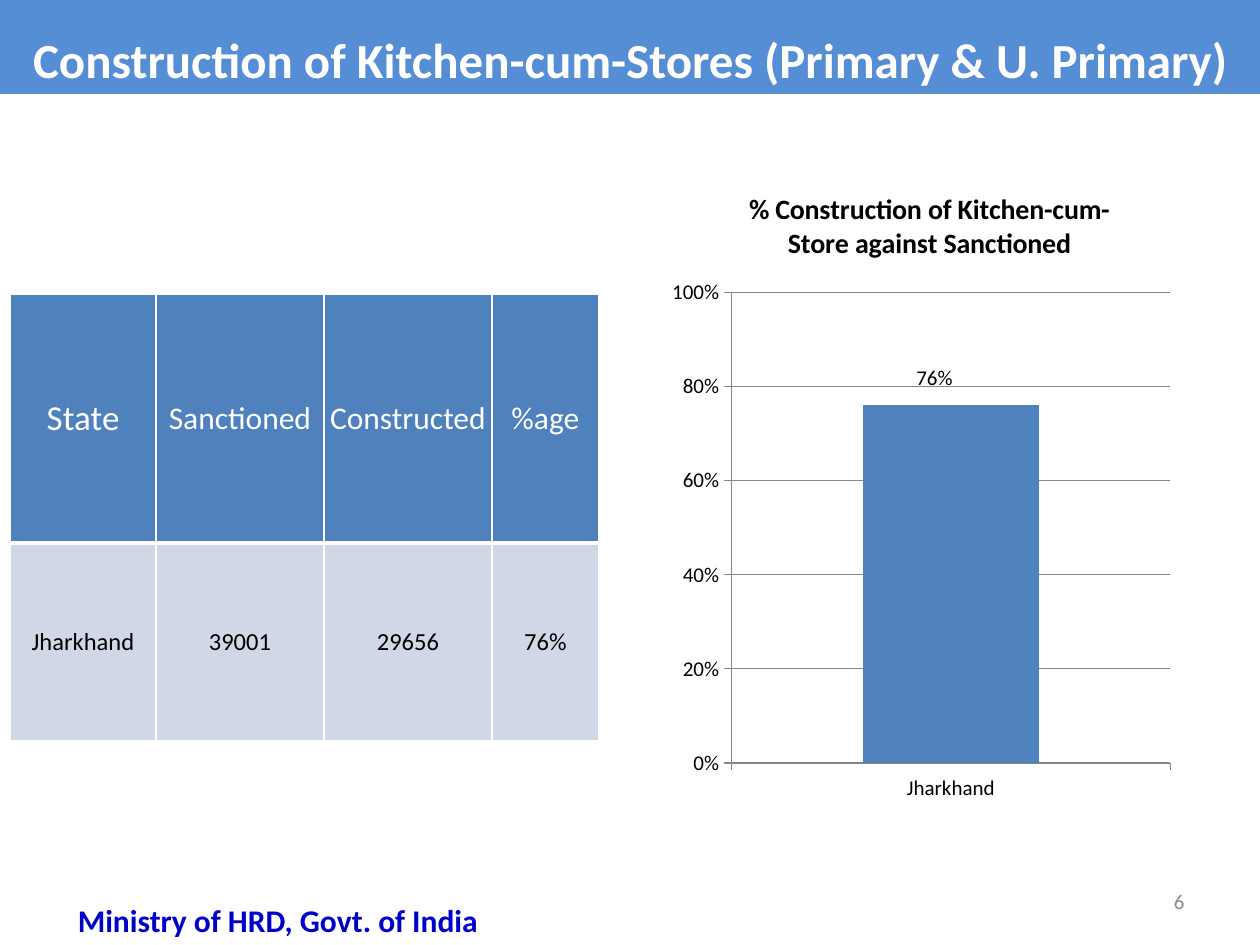
from dataclasses import dataclass

from lxml.etree import SubElement
from pptx import Presentation
from pptx.chart.data import CategoryChartData
from pptx.dml.color import RGBColor
from pptx.enum.chart import XL_CHART_TYPE, XL_TICK_MARK
from pptx.enum.shapes import MSO_SHAPE
from pptx.enum.text import MSO_ANCHOR, PP_ALIGN
from pptx.oxml.ns import qn
from pptx.util import Emu, Pt


@dataclass(frozen=True)
class Theme:
    font: str = "Calibri"
    banner: str = "558ED5"
    accent: str = "4F81BD"
    band: str = "D0D8E8"
    white: str = "FFFFFF"
    black: str = "000000"
    grid: str = "868686"
    muted: str = "8C8C8C"
    footer: str = "0000CC"
    title_size: int = 28
    state_size: int = 20
    head_size: int = 18
    chart_title_size: int = 16
    body_size: int = 14
    small_size: int = 12


THEME = Theme()
EMU_PER_PX = 914400 / 126


def px(length):
    return Emu(round(length * EMU_PER_PX))


def rgb(color):
    return RGBColor.from_string(color)


def set_font(font, size, color, bold=False):
    font.name, font.size, font.bold = THEME.font, Pt(size), bold
    font.color.rgb = rgb(color)


def write(frame, text, size, color, bold=False, align=PP_ALIGN.CENTER):
    frame.word_wrap = True
    para = frame.paragraphs[0]
    para.text = text
    para.alignment = align
    set_font(para.font, size, color, bold)
    return para


def add_text(page, box, text, size, color, bold=False,
             align=PP_ALIGN.CENTER, anchor=MSO_ANCHOR.TOP):
    frame = page.shapes.add_textbox(*map(px, box)).text_frame
    frame.vertical_anchor = anchor
    write(frame, text, size, color, bold, align)


def add_banner(page, box):
    banner = page.shapes.add_shape(MSO_SHAPE.RECTANGLE, *map(px, box))
    banner.shadow.inherit = False
    banner.fill.solid()
    banner.fill.fore_color.rgb = rgb(THEME.banner)
    banner.line.fill.background()
    banner.text_frame.vertical_anchor = MSO_ANCHOR.MIDDLE
    para = write(banner.text_frame,
                 "Construction of Kitchen-cum-Stores (Primary & U. Primary)",
                 THEME.title_size, THEME.white, bold=True)
    para.line_spacing = 1.4


def set_borders(cell, **widths):
    properties = cell._tc.get_or_add_tcPr()
    for side in "LRTB":
        width = Pt(widths.get(side, 1))
        line = SubElement(properties, qn(f"a:ln{side}"), w=str(width))
        fill = SubElement(line, qn("a:solidFill"))
        SubElement(fill, qn("a:srgbClr"), val=THEME.white)


def add_state_table(page, box):
    rows = [["State", "Sanctioned", "Constructed", "%age"],
            ["Jharkhand", "39001", "29656", "76%"]]
    table = page.shapes.add_table(2, 4, *map(px, box)).table
    for column, width in zip(table.columns, (146, 168, 168, 107)):
        column.width = px(width)
    for row, height in zip(table.rows, (249, 198)):
        row.height = px(height)

    for r, texts in enumerate(rows):
        header = r == 0
        for c, text in enumerate(texts):
            cell = table.cell(r, c)
            cell.margin_left = cell.margin_right = cell.margin_top = px(1)
            cell.margin_bottom = 0
            cell.vertical_anchor = MSO_ANCHOR.MIDDLE
            # The rule under the header is thicker than the others
            set_borders(cell, **({"B": 3} if header else {"T": 3}))
            cell.fill.solid()
            cell.fill.fore_color.rgb = rgb(THEME.accent if header else THEME.band)
            head_size = THEME.state_size if c == 0 else THEME.head_size
            write(cell.text_frame, text,
                  head_size if header else THEME.body_size,
                  THEME.white if header else THEME.black)


def set_plot_layout(chart, **fractions):
    area = chart._chartSpace.chart.plotArea
    for old in area.findall(qn("c:layout")):
        area.remove(old)
    layout = SubElement(area, qn("c:layout"))
    area.insert(0, layout)
    manual = SubElement(layout, qn("c:manualLayout"))
    settings = {"layoutTarget": "inner", "xMode": "edge", "yMode": "edge", **fractions}
    for name, value in settings.items():
        SubElement(manual, qn(f"c:{name}"), val=str(value))


def add_progress_chart(page, box):
    title = "% Construction of Kitchen-cum-Store against Sanctioned"
    data = CategoryChartData(number_format="0%")
    data.categories = ["Jharkhand"]
    data.add_series(title, [0.76])
    chart = page.shapes.add_chart(
        XL_CHART_TYPE.COLUMN_CLUSTERED, *map(px, box), data).chart
    set_font(chart.font, THEME.head_size, THEME.black)
    chart.has_legend = False

    # Title
    chart.has_title = True
    chart.chart_title.include_in_layout = False
    para = chart.chart_title.text_frame.paragraphs[0]
    para.text = title
    set_font(para.font, THEME.chart_title_size, THEME.black, bold=True)

    # Column
    plot = chart.plots[0]
    plot.gap_width = 150
    plot.vary_by_categories = False
    column = plot.series[0].format.fill
    column.solid()
    column.fore_color.rgb = rgb(THEME.accent)

    # Axes and gridlines
    value_axis = chart.value_axis
    value_axis.minimum_scale, value_axis.maximum_scale = 0, 1
    value_axis.major_unit = 0.2
    value_axis.tick_labels.number_format = "0%"
    value_axis.tick_labels.number_format_is_linked = False
    value_axis.has_major_gridlines = True
    for axis in (chart.category_axis, value_axis):
        axis.major_tick_mark = XL_TICK_MARK.OUTSIDE
        set_font(axis.tick_labels.font, THEME.small_size, THEME.black)
    for part in (chart.category_axis, value_axis, value_axis.major_gridlines):
        part.format.line.color.rgb = rgb(THEME.grid)
        part.format.line.width = Pt(0.75)
    set_plot_layout(chart, x=0.13, y=0.19, w=0.82, h=0.7)

    # Value above the column
    left, top = box[:2]
    add_text(page, (left + 242, top + 193, 74, 38), "76%", THEME.small_size,
             THEME.black, align=PP_ALIGN.LEFT)


def add_footer(page, box):
    left, top, width, height = box
    add_text(page, (left + width - 294, top, 294, 50), "6", THEME.small_size,
             THEME.muted, align=PP_ALIGN.RIGHT, anchor=MSO_ANCHOR.MIDDLE)
    add_text(page, (left, top + height - 50, 494, 50),
             "Ministry of HRD, Govt. of India", THEME.head_size,
             THEME.footer, bold=True)


def main():
    deck = Presentation()
    deck.slide_width, deck.slide_height = px(1260), px(945)
    page = deck.slides.add_slide(deck.slide_layouts[6])
    add_banner(page, (0, 0, 1260, 94))
    add_progress_chart(page, (662, 165, 535, 672))
    add_state_table(page, (10, 294, 589, 447))
    add_footer(page, (31, 876, 1166, 69))
    deck.save("out.pptx")


if __name__ == "__main__":
    main()
